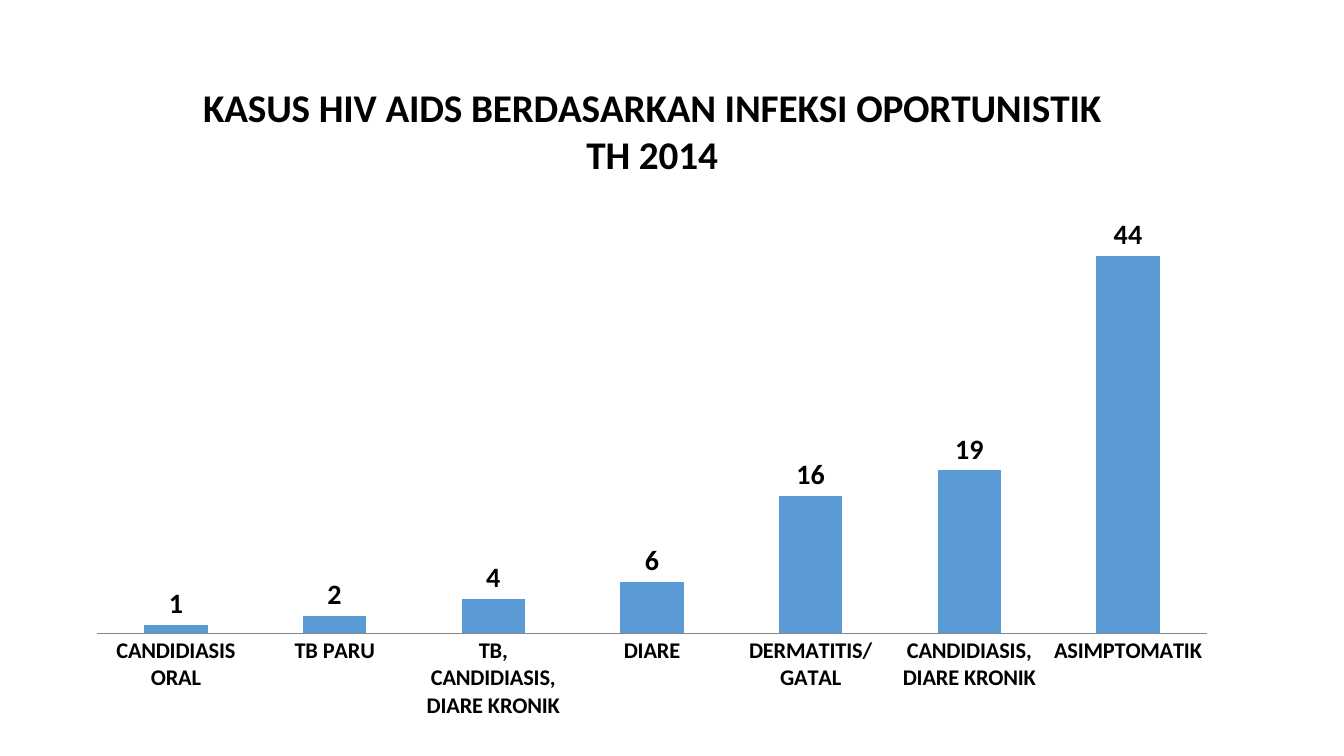
from lxml import etree
from pptx import Presentation
from pptx.chart.data import CategoryChartData
from pptx.dml.color import RGBColor
from pptx.enum.chart import XL_CHART_TYPE, XL_LABEL_POSITION, XL_TICK_MARK
from pptx.oxml.ns import qn
from pptx.util import Pt

COLUMNS = XL_CHART_TYPE.COLUMN_CLUSTERED
ABOVE_BAR = XL_LABEL_POSITION.OUTSIDE_END
NO_TICK = XL_TICK_MARK.NONE

COLORS = {"text": "000000", "bar": "5B9BD5", "axis": "868686"}

TITLE = "KASUS HIV AIDS BERDASARKAN INFEKSI OPORTUNISTIK TH 2014"
CASES = {
    "CANDIDIASIS ORAL": 1,
    "TB PARU": 2,
    "TB, CANDIDIASIS, DIARE KRONIK": 4,
    "DIARE": 6,
    "DERMATITIS/GATAL": 16,
    "CANDIDIASIS, DIARE KRONIK": 19,
    "ASIMPTOMATIK": 44,
}


class ChartSlide:
    font_name = "Calibri"

    def __init__(self, presentation):
        self.slide = presentation.slides.add_slide(presentation.slide_layouts[6])

    def color(self, key):
        return RGBColor.from_string(COLORS[key])

    def style(self, font, size, bold=True):
        font.name = self.font_name
        font.size = Pt(size)
        font.bold = bold
        font.color.rgb = self.color("text")

    def column_chart(self, cases, left, top, width, height):
        data = CategoryChartData()
        data.categories = list(cases)
        data.add_series("Series 1", list(cases.values()))
        frame = self.slide.shapes.add_chart(
            COLUMNS, Pt(left), Pt(top), Pt(width), Pt(height), data)
        chart = frame.chart
        self.style(chart.font, 10, bold=False)
        chart.has_legend = False
        self.bars(chart.plots[0])
        self.axes(chart)
        return chart

    def bars(self, plot):
        plot.gap_width = 150
        plot.vary_by_categories = False
        fill = plot.series[0].format.fill
        fill.solid()
        fill.fore_color.rgb = self.color("bar")
        plot.has_data_labels = True
        labels = plot.data_labels
        labels.show_value = True
        labels.position = ABOVE_BAR
        self.style(labels.font, 20)

    def axes(self, chart):
        infections = chart.category_axis
        infections.major_tick_mark = NO_TICK
        infections.format.line.color.rgb = self.color("axis")
        infections.format.line.width = Pt(0.75)
        self.style(infections.tick_labels.font, 16)
        counts = chart.value_axis
        counts.visible = False
        counts.has_major_gridlines = False
        counts.minimum_scale = 0
        counts.maximum_scale = 50

    def title(self, chart, text):
        chart.has_title = True
        chart.chart_title.include_in_layout = False
        run = chart.chart_title.text_frame.paragraphs[0].add_run()
        run.text = text
        self.style(run.font, 28)

    def plot_area(self, chart, **fractions):
        area = chart.plots[0]._element.getparent()
        for old_layout in area.findall(qn("c:layout")):
            area.remove(old_layout)
        layout = etree.Element(qn("c:layout"))
        area.insert(0, layout)
        manual = etree.SubElement(layout, qn("c:manualLayout"))
        settings = {"layoutTarget": "inner", "xMode": "edge", "yMode": "edge"}
        for tag, value in {**settings, **fractions}.items():
            etree.SubElement(manual, qn("c:" + tag)).set("val", str(value))


def main():
    presentation = Presentation()
    presentation.slide_width = Pt(960)
    presentation.slide_height = Pt(540)
    page = ChartSlide(presentation)
    chart = page.column_chart(CASES, 52.5, 39, 826.5, 486.5)
    page.title(chart, TITLE)
    page.plot_area(chart, x=0.02, y=0.22, w=0.96, h=0.63)
    presentation.save("out.pptx")


if __name__ == "__main__":
    main()
